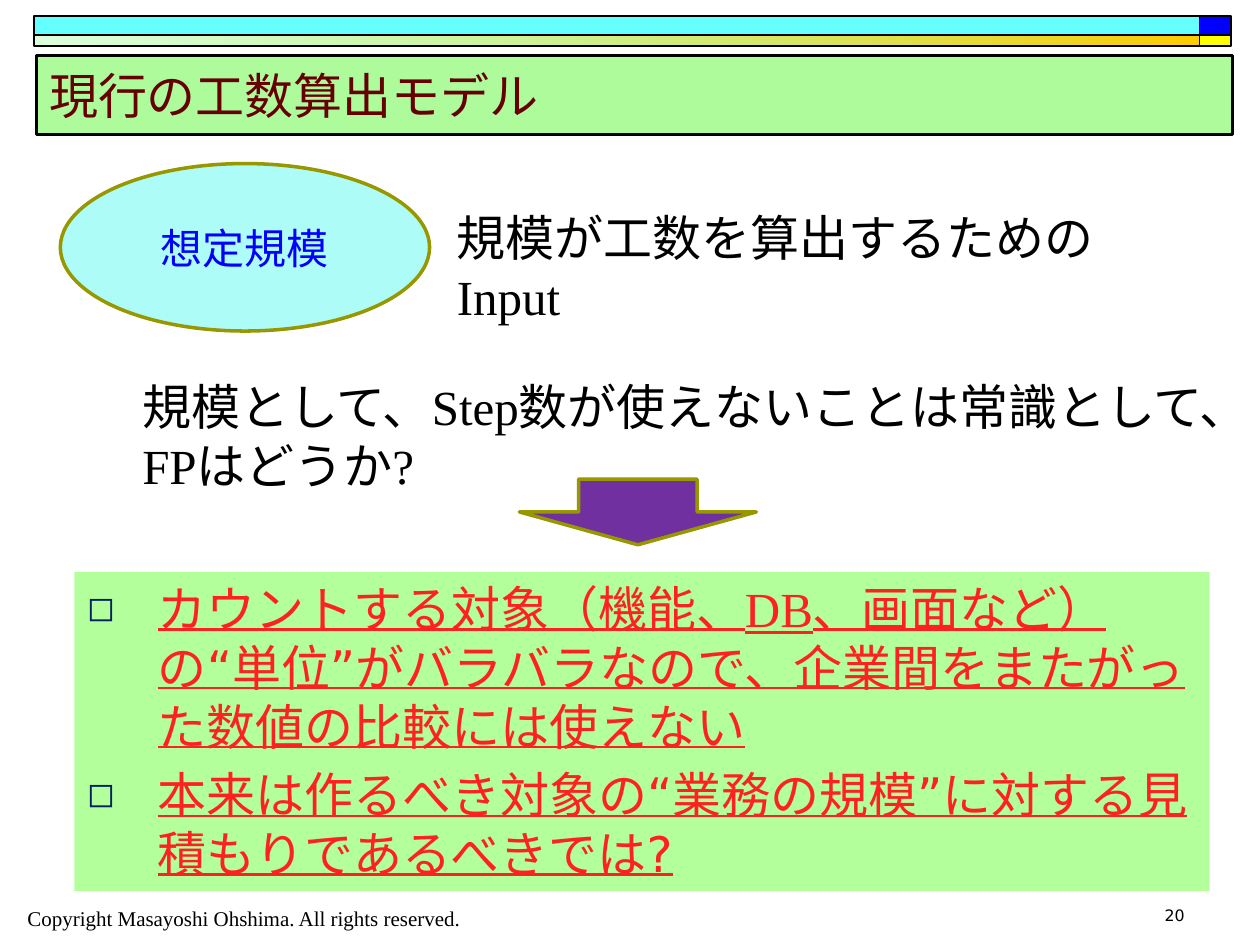
from lxml import etree
from pptx import Presentation
from pptx.dml.color import RGBColor
from pptx.enum.shapes import MSO_SHAPE as Shape
from pptx.enum.text import MSO_ANCHOR as Anchor, MSO_AUTO_SIZE as AutoSize, PP_ALIGN as Align
from pptx.oxml.ns import qn
from pptx.util import Pt

SERIF, SANS = "Times New Roman", "DejaVu Sans"
COLORS = {
    "black": "000000", "maroon": "660000", "blue": "0000FF", "red": "FF2121",
    "aqua": "66FFFF", "yellow": "FFFF00", "mint": "66FF66", "amber": "FFCC00",
    "title": "7EF961", "oval": "AEFCF8", "olive": "979700", "purple": "7030A0",
    "list": "B3FF9B", "bullet": "002060",
}
BULLETS = [
    ("カウントする対象（機能、DB、画面など）の“単位”がバラバラなので、企業間をまたがった数値の比較には使えない", SERIF),
    ("本来は作るべき対象の“業務の規模”に対する見積もりであるべきでは?", SANS),
]


def rgb(name):
    return RGBColor.from_string(COLORS[name])


def place(box, left, top, width, height):
    box.left, box.top, box.width, box.height = map(Pt, (left, top, width, height))


def paint(box, fill, line=None, weight=1):
    box.fill.solid()
    box.fill.fore_color.rgb = rgb(fill)
    if line:
        box.line.color.rgb = rgb(line)
        box.line.width = Pt(weight)


def set_alpha(color, percent):
    alpha = etree.SubElement(color, qn("a:alpha"))
    alpha.set("val", str(percent * 1000))


def write(para, text, color="black", align=Align.LEFT, **formats):
    span = para.add_run()
    span.text = text
    para.alignment = align
    span.font.color.rgb = rgb(color)
    for key, value in ({"size": Pt(28), "name": SERIF} | formats).items():
        setattr(span.font, key, value)
    # Japanese glyphs use the sans face
    east_asian = etree.Element(qn("a:ea"), typeface=SANS)
    span.font._element.find(qn("a:latin")).addnext(east_asian)


def add_shape(page, kind, bounds, fill, line="black", weight=1):
    box = page.shapes.add_shape(kind, *map(Pt, bounds))
    box.shadow.inherit = False
    paint(box, fill, line, weight)
    return box


def add_text(page, bounds, text, **formats):
    box = page.shapes.add_textbox(*map(Pt, bounds))
    box.text_frame.word_wrap = True
    write(box.text_frame.paragraphs[0], text, **formats)


def add_bullet(para):
    props = para._p.get_or_add_pPr()
    props.set("marL", str(Pt(40.5)))
    props.set("indent", str(-Pt(40.5)))
    para.space_before = Pt(5.6)
    color = etree.SubElement(props, qn("a:buClr"))
    etree.SubElement(color, qn("a:srgbClr"), val=COLORS["bullet"])
    etree.SubElement(props, qn("a:buSzPct"), val="70000")
    etree.SubElement(props, qn("a:buFont"), typeface=SANS)
    etree.SubElement(props, qn("a:buChar"), char="◻")


def add_header_bars(page):
    columns = [(19.5, 666), (685.5, 18)]
    rows = [(9.2, 10.6, ("aqua", "blue")), (19.8, 6.5, ("mint", "yellow"))]
    for top, height, fills in rows:
        for (left, width), fill in zip(columns, fills):
            bar = add_shape(page, Shape.RECTANGLE, (left, top, width, height), fill)
            if fill == "mint":
                bar.fill.gradient()
                bar.fill.gradient_angle = 45
                for stop, name in zip(bar.fill.gradient_stops, ("mint", "amber")):
                    stop.color.rgb = rgb(name)
                set_alpha(next(bar._element.iter(qn("a:srgbClr"))), 21)


def fill_title(title):
    place(title, 20.9, 31.7, 683.3, 45.4)
    paint(title, "title", "black", 1.75)
    set_alpha(title._element.spPr.find(qn("a:solidFill"))[0], 63)
    frame = title.text_frame
    frame.auto_size = AutoSize.NONE
    frame.vertical_anchor = Anchor.MIDDLE
    write(frame.paragraphs[0], "現行の工数算出モデル", "maroon", name=SANS)


def fill_list(body):
    place(body, 42.5, 326.9, 648.7, 182.2)
    paint(body, "list")
    frame = body.text_frame
    frame.auto_size = AutoSize.NONE
    for index, (text, font) in enumerate(BULLETS):
        para = frame.add_paragraph() if index else frame.paragraphs[0]
        write(para, text, "red", name=font, underline=True)
        add_bullet(para)


def main():
    deck = Presentation()
    deck.slide_width, deck.slide_height = Pt(720), Pt(540)
    page = deck.slides.add_slide(deck.slide_layouts[1])

    # Header and title
    add_header_bars(page)
    fill_title(page.shapes.title)

    # Estimated size and its role
    oval = add_shape(page, Shape.OVAL, (34.5, 93.5, 211, 95.7), "oval", "olive", 2)
    oval.text_frame.vertical_anchor = Anchor.MIDDLE
    write(oval.text_frame.paragraphs[0], "想定規模", "blue", Align.CENTER,
          size=Pt(24), name=SANS)
    add_text(page, (254, 115.2, 410.4, 74.9), "規模が工数を算出するためのInput")
    add_text(page, (74.2, 211.7, 625.7, 74.9),
             "規模として、Step数が使えないことは常識として、FPはどうか?")

    # Conclusion
    add_shape(page, Shape.DOWN_ARROW, (296.8, 273.8, 135.4, 37.5), "purple", "olive", 2)
    fill_list(page.placeholders[1])

    # Footer
    add_text(page, (8.6, 514.1, 283.7, 17.3),
             "Copyright Masayoshi Ohshima. All rights reserved.", size=Pt(12))
    add_text(page, (534.2, 514.1, 149.8, 14.4), "20", align=Align.RIGHT,
             size=Pt(9), name=SANS)

    deck.save("out.pptx")


if __name__ == "__main__":
    main()
